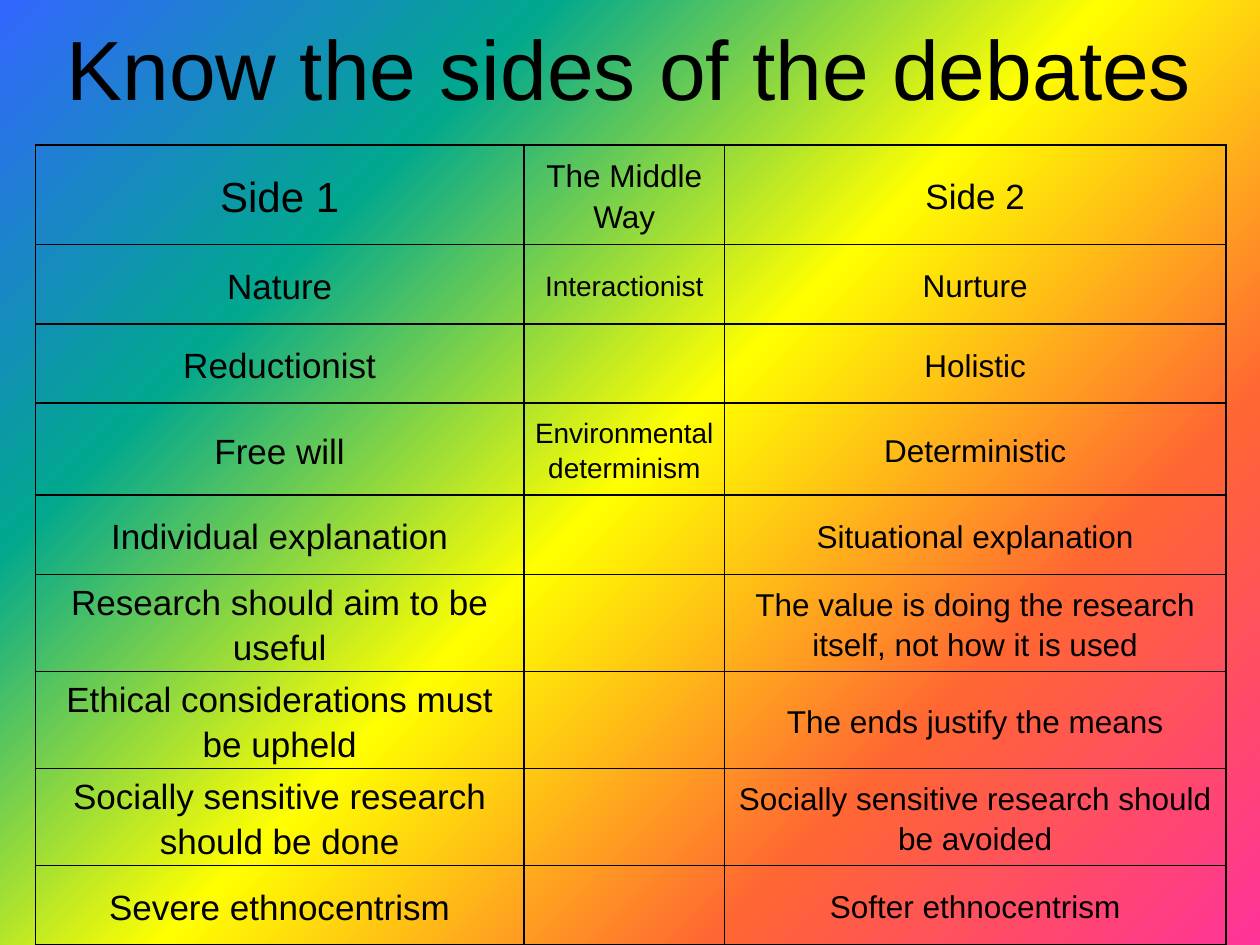
from lxml.etree import SubElement
from pptx import Presentation
from pptx.dml.color import RGBColor
from pptx.enum.text import MSO_ANCHOR, MSO_AUTO_SIZE, PP_ALIGN
from pptx.oxml.ns import qn
from pptx.util import Inches, Pt

BLACK = "000000"
RAINBOW = ["FF3399", "FF6633", "FFFF00", "01A78F", "3366FF"]
COLUMNS = [3.88, 1.59, 3.98]
ROW_HEIGHTS = [0.79, 0.63, 0.63, 0.73, 0.63, 0.77, 0.77, 0.77, 0.63]
HEADER_SIZES = [24, 18, 20]
BODY_SIZES = [20, 16, 18]
DEBATES = [
    ("Side 1", "The Middle Way", "Side 2"),
    ("Nature", "Interactionist", "Nurture"),
    ("Reductionist", "", "Holistic"),
    ("Free will", "Environmental determinism", "Deterministic"),
    ("Individual explanation", "", "Situational explanation"),
    ("Research should aim to be useful", "",
     "The value is doing the research itself, not how it is used"),
    ("Ethical considerations must be upheld", "", "The ends justify the means"),
    ("Socially sensitive research should be done", "",
     "Socially sensitive research should be avoided"),
    ("Severe ethnocentrism", "", "Softer ethnocentrism"),
]


def color(value):
    return RGBColor.from_string(value)


def format_paragraph(p, size):
    p.alignment = PP_ALIGN.CENTER
    p.font.size = Pt(size)
    p.font.name = "Arial"
    p.font.color.rgb = color(BLACK)


def paint_background(s):
    fill = s.background.fill
    fill.gradient()
    fill.gradient_angle = 135
    stops = s.element.find(".//" + qn("a:gsLst"))
    for stop in list(stops):
        stops.remove(stop)
    step = 100000 // (len(RAINBOW) - 1)
    for i, value in enumerate(RAINBOW):
        stop = SubElement(stops, qn("a:gs"), pos=str(i * step))
        SubElement(stop, qn("a:srgbClr"), val=value)


def add_title(s, left, top, width, height):
    sp = s.shapes.title
    sp.left, sp.top, sp.width, sp.height = map(Inches, (left, top, width, height))
    tf = sp.text_frame
    tf.text = "Know the sides of the debates"
    tf.word_wrap = True
    tf.auto_size = MSO_AUTO_SIZE.NONE
    tf.vertical_anchor = MSO_ANCHOR.TOP
    tf.margin_top = Inches(0.13)
    format_paragraph(tf.paragraphs[0], 48)


def add_borders(cell):
    tc_pr = cell._tc.get_or_add_tcPr()
    for i, side in enumerate(("lnL", "lnR", "lnT", "lnB")):
        ln = tc_pr.makeelement(qn("a:" + side), {"w": str(Pt(1))})
        fill = SubElement(ln, qn("a:solidFill"))
        SubElement(fill, qn("a:srgbClr"), val=BLACK)
        tc_pr.insert(i, ln)


def fill_cell(cell, text, size):
    cell.fill.background()
    cell.vertical_anchor = MSO_ANCHOR.MIDDLE
    cell.margin_left = cell.margin_right = Inches(0.07)
    cell.margin_top = cell.margin_bottom = 0
    cell.text = text
    p = cell.text_frame.paragraphs[0]
    p.line_spacing = 1.15
    format_paragraph(p, size)
    add_borders(cell)


def add_debate_table(s, left, top, width, height):
    frame = s.shapes.add_table(len(DEBATES), len(COLUMNS),
                               *map(Inches, (left, top, width, height)))
    table = frame.table
    table.first_row = table.horz_banding = False
    for column, share in zip(table.columns, COLUMNS):
        column.width = Inches(width * share / sum(COLUMNS))
    for row, share in zip(table.rows, ROW_HEIGHTS):
        row.height = Inches(height * share / sum(ROW_HEIGHTS))
    for r, texts in enumerate(DEBATES):
        sizes = BODY_SIZES if r else HEADER_SIZES
        for c, (text, size) in enumerate(zip(texts, sizes)):
            fill_cell(table.cell(r, c), text, size)


def main():
    prs = Presentation()
    prs.slide_width, prs.slide_height = Inches(10), Inches(7.5)
    s = prs.slides.add_slide(prs.slide_layouts[5])
    paint_background(s)
    add_title(s, 0, 0, 9.99, 0.91)
    add_debate_table(s, 0.28, 1.15, 9.45, 6.35)
    prs.save("out.pptx")


if __name__ == "__main__":
    main()
